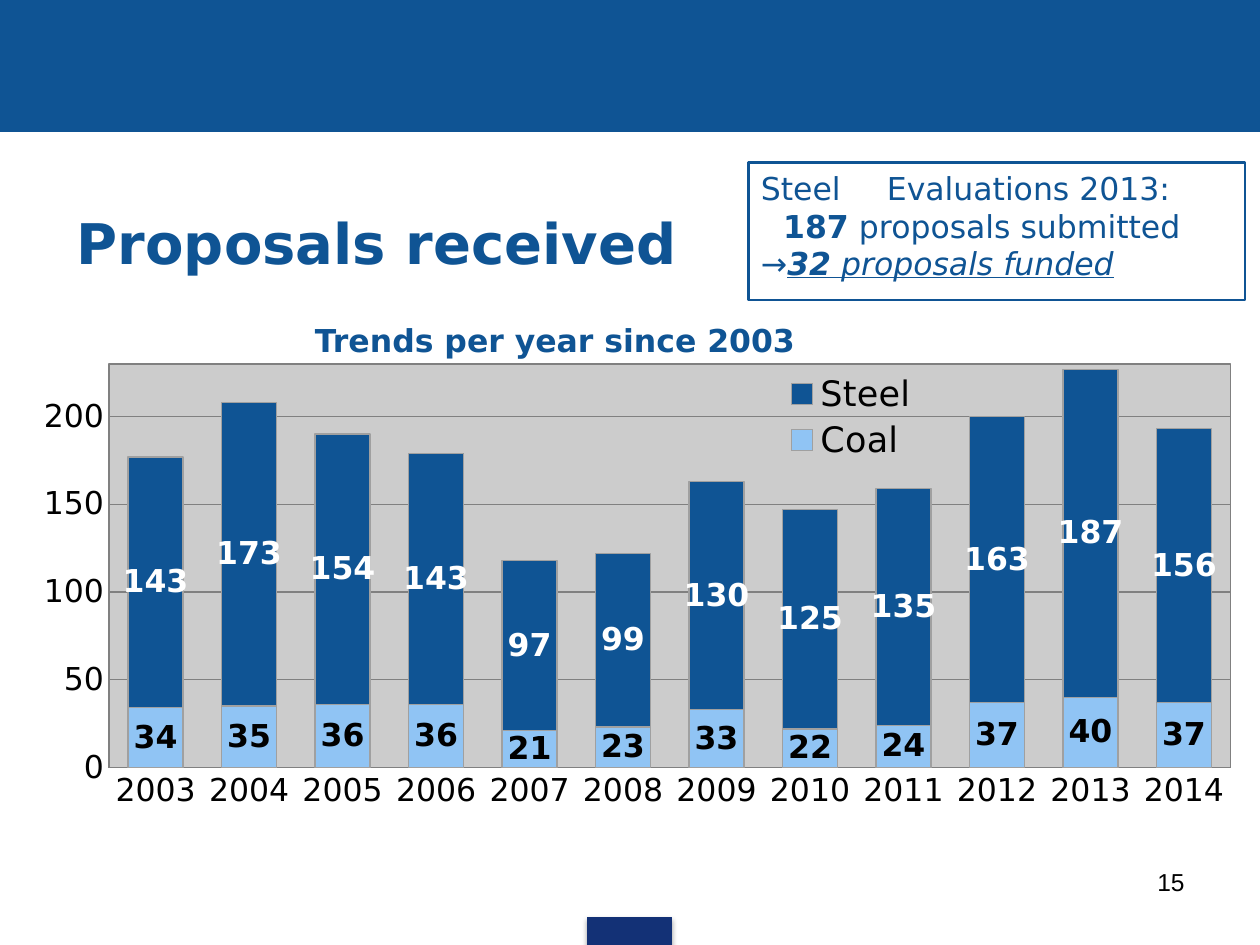
import dataclasses

import lxml.etree
import pptx
import pptx.chart.data
import pptx.dml.color
import pptx.enum.chart
import pptx.enum.shapes
import pptx.enum.text
import pptx.oxml
import pptx.oxml.ns
import pptx.util

Cm = pptx.util.Cm
Pt = pptx.util.Pt


@dataclasses.dataclass(frozen=True)
class Theme:
    blue: str = "0F5494"
    light_blue: str = "90C4F4"
    navy: str = "133176"
    plot_grey: str = "CCCCCC"
    line_grey: str = "808080"
    bar_edge: str = "A0A0A0"
    black: str = "000000"
    white: str = "FFFFFF"
    font: str = "DejaVu Sans"
    number_font: str = "Arial"
    title: int = 32
    legend: int = 20
    body: int = 18
    small: int = 14


theme = Theme()


def rgb(value):
    return pptx.dml.color.RGBColor.from_string(value)


def write(frame, paragraphs, *, size=theme.body, font=theme.font, color=theme.blue,
          bold=False, align=pptx.enum.text.PP_ALIGN.LEFT,
          anchor=pptx.enum.text.MSO_ANCHOR.TOP, indents=()):
    """Fill a frame; each paragraph is a list of (text, style letters from "biu")."""
    frame.word_wrap = True
    frame.vertical_anchor = anchor
    for index, runs in enumerate(paragraphs):
        paragraph = frame.paragraphs[0] if index == 0 else frame.add_paragraph()
        paragraph.alignment = align
        if index < len(indents) and indents[index]:
            properties = paragraph._p.get_or_add_pPr()
            properties.set("marL", str(Cm(indents[index])))
            properties.set("indent", "0")
        for text, style in runs:
            run = paragraph.add_run()
            run.text = text
            run.font.name = font
            run.font.size = Pt(size)
            run.font.color.rgb = rgb(color)
            run.font.bold = bold or "b" in style
            run.font.italic = "i" in style
            run.font.underline = "u" in style


presentation = pptx.Presentation()
presentation.slide_width = Cm(25.4)
presentation.slide_height = Cm(19.05)
slide = presentation.slides.add_slide(presentation.slide_layouts[6])
shapes = slide.shapes
rectangle = pptx.enum.shapes.MSO_SHAPE.RECTANGLE

# Header band and footer tab
bands = []
for left, top, width, height, color in (
    (0, 0, 25.4, 2.66, theme.blue),
    (11.84, 18.49, 1.7, 0.56, theme.navy),
):
    band = shapes.add_shape(rectangle, Cm(left), Cm(top), Cm(width), Cm(height))
    band.shadow.inherit = False
    band.fill.solid()
    band.fill.fore_color.rgb = rgb(color)
    band.line.color.rgb = rgb(color)
    band.line.width = Pt(0.75)
    bands.append(band)

footer_effects = bands[-1]._element.spPr.find(pptx.oxml.ns.qn("a:effectLst"))
footer_effects.append(pptx.oxml.parse_xml(
    f'<a:outerShdw {pptx.oxml.ns.nsdecls("a")} blurRad="{Pt(3.1)}" dist="{Pt(1.8)}" '
    f'dir="5400000"><a:srgbClr val="{theme.black}"><a:alpha val="35000"/>'
    '</a:srgbClr></a:outerShdw>'))

# Title and slide number
title = shapes.add_textbox(Cm(0.3), Cm(3.28), Cm(14.58), Cm(3.2))
write(title.text_frame, [[("Proposals received", "")]], size=theme.title, bold=True,
      anchor=pptx.enum.text.MSO_ANCHOR.MIDDLE, indents=(1,))

slide_number = shapes.add_textbox(Cm(18.21), Cm(17.35), Cm(5.92), Cm(1.32))
write(slide_number.text_frame, [[("15", "")]], size=theme.small, font=theme.number_font,
      color=theme.black, align=pptx.enum.text.PP_ALIGN.RIGHT)

# Proposals per year
proposals = pptx.chart.data.CategoryChartData(number_format="0")
proposals.categories = [str(year) for year in range(2003, 2015)]
proposals.add_series("Coal", (34, 35, 36, 36, 21, 23, 33, 22, 24, 37, 40, 37))
proposals.add_series("Steel", (143, 173, 154, 143, 97, 99, 130, 125, 135, 163, 187, 156))
trend = shapes.add_chart(
    pptx.enum.chart.XL_CHART_TYPE.COLUMN_STACKED,
    Cm(0.3), Cm(6.48), Cm(24.61), Cm(10.72), proposals).chart
trend.has_title = False
trend.font.name = theme.font
trend.font.size = Pt(theme.body)
trend.font.color.rgb = rgb(theme.black)

bars = trend.plots[0]
bars.gap_width = 70
bars.overlap = 100
bars.vary_by_categories = False
for series, fill, label_color in zip(
        bars.series, (theme.light_blue, theme.blue), (theme.black, theme.white)):
    series.format.fill.solid()
    series.format.fill.fore_color.rgb = rgb(fill)
    series.format.line.color.rgb = rgb(theme.bar_edge)
    series.format.line.width = Pt(0.75)
    labels = series.data_labels
    labels.show_value = True
    labels.position = pptx.enum.chart.XL_LABEL_POSITION.CENTER
    labels.font.name = theme.font
    labels.font.size = Pt(theme.body)
    labels.font.bold = True
    labels.font.color.rgb = rgb(label_color)

counts = trend.value_axis
counts.minimum_scale = 0
counts.maximum_scale = 230
counts.major_unit = 50
counts.has_major_gridlines = True
for axis in (trend.category_axis, counts):
    axis.major_tick_mark = pptx.enum.chart.XL_TICK_MARK.NONE
    axis.minor_tick_mark = pptx.enum.chart.XL_TICK_MARK.NONE
    axis.tick_labels.font.size = Pt(theme.body)
for axis_line in (trend.category_axis.format.line, counts.format.line,
                  counts.major_gridlines.format.line):
    axis_line.color.rgb = rgb(theme.line_grey)
    axis_line.width = Pt(0.75)

trend.has_legend = True
legend = trend.legend
legend.position = pptx.enum.chart.XL_LEGEND_POSITION.RIGHT
legend.include_in_layout = True
legend.font.size = Pt(theme.legend)


def place(part, target, x, y, w, h):
    """Fix a chart part by fractions of the chart area."""
    for old in part.findall(pptx.oxml.ns.qn("c:layout")):
        part.remove(old)
    inner = f'<c:layoutTarget val="{target}"/>' if target else ""
    modes = '<c:xMode val="edge"/><c:yMode val="edge"/>'
    sizes = "".join(f'<c:{key} val="{value}"/>' for key, value in zip("xywh", (x, y, w, h)))
    layout = pptx.oxml.parse_xml(
        f'<c:layout {pptx.oxml.ns.nsdecls("c")}><c:manualLayout>{inner}{modes}{sizes}'
        '</c:manualLayout></c:layout>')
    part.insert(0 if target else 1, layout)


plot_area = trend._chartSpace.chart.plotArea
place(plot_area, "inner", 0.077, 0.08, 0.919, 0.759)
place(legend._element, "", 0.62, 0.09, 0.13, 0.18)
plot_area.append(pptx.oxml.parse_xml(
    f'<c:spPr {pptx.oxml.ns.nsdecls("c", "a")}>'
    f'<a:solidFill><a:srgbClr val="{theme.plot_grey}"/></a:solidFill>'
    f'<a:ln w="{Pt(0.75)}"><a:solidFill><a:srgbClr val="{theme.line_grey}"/>'
    '</a:solidFill></a:ln></c:spPr>'))

trend_heading = shapes.add_textbox(Cm(5.1), Cm(6.35), Cm(12.7), Cm(1.02))
write(trend_heading.text_frame, [[("Trends per year since 2003", "")]], bold=True,
      indents=(1,))

# Evaluation summary
summary = shapes.add_shape(rectangle, Cm(15.09), Cm(3.28), Cm(10.01), Cm(2.77))
summary.shadow.inherit = False
summary.fill.background()
summary.line.color.rgb = rgb(theme.blue)
summary.line.width = Pt(1.5)
write(summary.text_frame, [
    [("Steel\tEvaluations 2013:", "")],
    [("187", "b"), (" proposals submitted", "")],
    [("→", ""), ("32", "biu"), (" proposals funded", "iu")],
], indents=(0, 0.45))

presentation.save("out.pptx")
